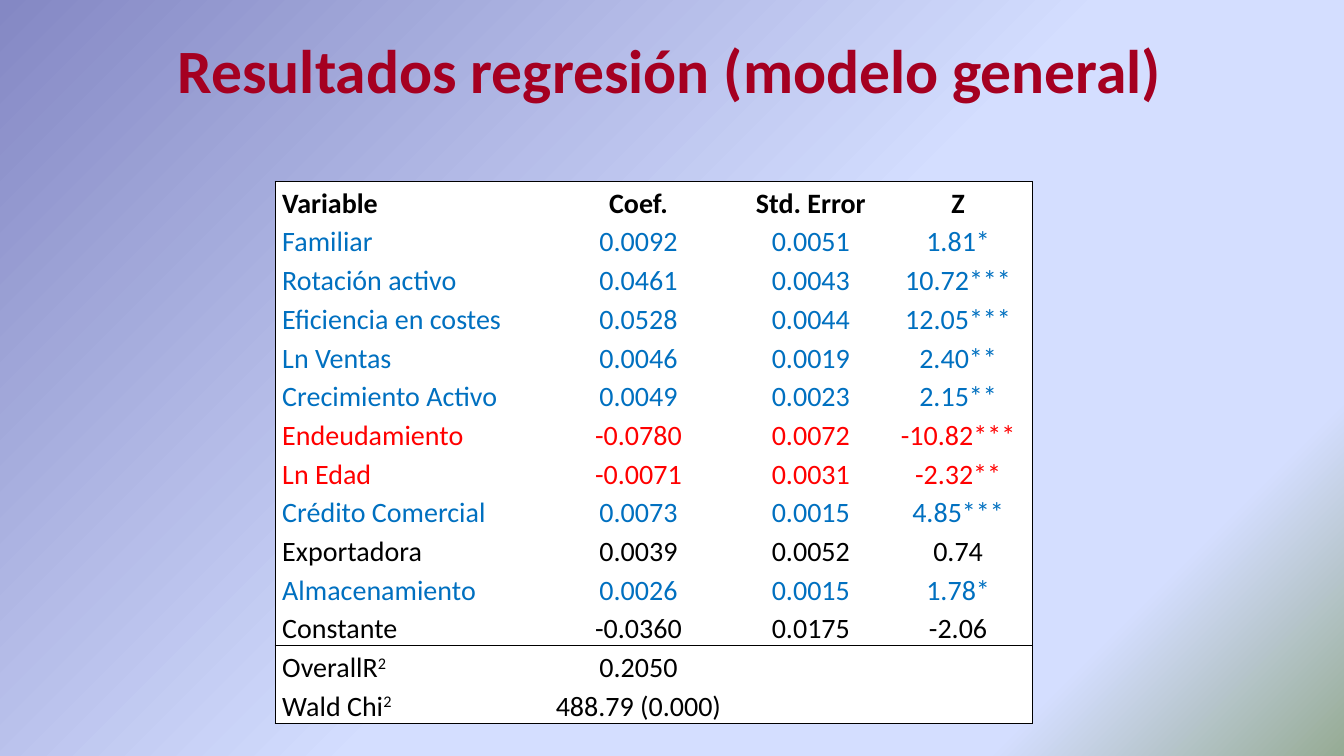
from dataclasses import dataclass

import lxml.etree
import pptx
import pptx.dml.color
import pptx.enum.text
import pptx.oxml.ns
import pptx.util

Pt = pptx.util.Pt
qn = pptx.oxml.ns.qn
ALIGN = pptx.enum.text.PP_ALIGN
ANCHOR = pptx.enum.text.MSO_ANCHOR


@dataclass(frozen=True)
class Theme:
    """Colours, typeface and type sizes of the deck."""
    font: str = "Calibri"
    heading_size: float = 44
    table_size: float = 20
    heading: str = "A50021"
    neutral: str = "000000"
    positive: str = "0070C0"
    negative: str = "FF0000"
    cell: str = "FFFFFF"
    border_width: float = 1
    backdrop: tuple = ((0, "8488C4"), (53, "D4DEFF"), (83, "D4DEFF"), (100, "96AB94"))


THEME = Theme()
COLUMN_WIDTHS = (188.6, 141.8, 104.4, 106)
ROW_HEIGHT = 27.6
HEADER = ("Variable", "Coef.", "Std. Error", "Z")
ESTIMATES = (
    (THEME.positive, "Familiar", "0.0092", "0.0051", "1.81*"),
    (THEME.positive, "Rotación activo", "0.0461", "0.0043", "10.72***"),
    (THEME.positive, "Eficiencia en costes", "0.0528", "0.0044", "12.05***"),
    (THEME.positive, "Ln Ventas", "0.0046", "0.0019", "2.40**"),
    (THEME.positive, "Crecimiento Activo", "0.0049", "0.0023", "2.15**"),
    (THEME.negative, "Endeudamiento", "-0.0780", "0.0072", "-10.82***"),
    (THEME.negative, "Ln Edad", "-0.0071", "0.0031", "-2.32**"),
    (THEME.positive, "Crédito Comercial", "0.0073", "0.0015", "4.85***"),
    (THEME.neutral, "Exportadora", "0.0039", "0.0052", "0.74"),
    (THEME.positive, "Almacenamiento", "0.0026", "0.0015", "1.78*"),
    (THEME.neutral, "Constante", "-0.0360", "0.0175", "-2.06"),
)
FIT_STATISTICS = (("OverallR^2", "0.2050", "", ""), ("Wald Chi^2", "488.79 (0.000)", "", ""))


def apply_format(target, values):
    """Set each named attribute of the target."""
    for attribute, value in values.items():
        setattr(target, attribute, value)


def rgb(colour):
    """Turn a hex string into a colour."""
    return pptx.dml.color.RGBColor.from_string(colour)


def write(paragraph, text, size, colour, bold, layout):
    """Fill a paragraph, raising whatever follows a caret."""
    apply_format(paragraph, layout)
    base, _, exponent = text.partition("^")
    for part, baseline in ((base, None), (exponent, "30000")):
        if part:
            run = paragraph.add_run()
            run.text = part
            apply_format(run.font, {"name": THEME.font, "size": Pt(size), "bold": bold})
            run.font.color.rgb = rgb(colour)
            if baseline:
                run.font._element.set("baseline", baseline)


def paint_backdrop(slide):
    """Lay the diagonal gradient behind the slide."""
    fill = slide.background.fill
    fill.gradient()
    fill.gradient_angle = 315
    stops = next(slide.element.iter(qn("a:gsLst")))
    for stop in list(stops):
        stops.remove(stop)
    for percent, colour in THEME.backdrop:
        stop = lxml.etree.SubElement(stops, qn("a:gs"), pos=str(percent * 1000))
        lxml.etree.SubElement(stop, qn("a:srgbClr"), val=colour)


def add_heading(slide, left, top, width, height):
    """Place the slide heading in its box."""
    frame = slide.shapes.add_textbox(Pt(left), Pt(top), Pt(width), Pt(height)).text_frame
    apply_format(frame, {"word_wrap": True, "vertical_anchor": ANCHOR.MIDDLE})
    write(frame.paragraphs[0], "Resultados regresión (modelo general)", THEME.heading_size,
          THEME.heading, True, {"alignment": ALIGN.CENTER, "line_spacing": 0.9})


def draw_borders(cell, ruled_sides):
    """Rule the given sides of a cell and clear the others."""
    properties = cell._tc.get_or_add_tcPr()
    for side, ruled in ruled_sides.items():
        border = lxml.etree.SubElement(properties, qn(f"a:ln{side}"), w=str(Pt(THEME.border_width)))
        if ruled:
            ink = lxml.etree.SubElement(border, qn("a:solidFill"))
            lxml.etree.SubElement(ink, qn("a:srgbClr"), val=THEME.neutral)
        else:
            lxml.etree.SubElement(border, qn("a:noFill"))


def add_results(slide, left, top):
    """Place the regression table with its top left corner at the given point."""
    rows = [(THEME.neutral, *HEADER), *ESTIMATES,
            *((THEME.neutral, *statistic) for statistic in FIT_STATISTICS)]
    fit_start = 1 + len(ESTIMATES)
    last_row, last_column = len(rows) - 1, len(HEADER) - 1
    results = slide.shapes.add_table(len(rows), len(HEADER), Pt(left), Pt(top),
                                     Pt(sum(COLUMN_WIDTHS)), Pt(ROW_HEIGHT * len(rows))).table
    apply_format(results, {"first_row": False, "horz_banding": False})
    for column, width in zip(results.columns, COLUMN_WIDTHS):
        column.width = Pt(width)
    for r, (colour, *values) in enumerate(rows):
        results.rows[r].height = Pt(ROW_HEIGHT)
        for c, value in enumerate(values):
            cell = results.cell(r, c)
            apply_format(cell, {"margin_left": Pt(5), "margin_right": Pt(5),
                                "margin_top": 0, "margin_bottom": 0})
            draw_borders(cell, {"L": c == 0, "R": c == last_column, "T": r in (0, fit_start),
                                "B": r in (fit_start - 1, last_row)})
            cell.fill.solid()
            cell.fill.fore_color.rgb = rgb(THEME.cell)
            write(cell.text_frame.paragraphs[0], value, THEME.table_size, colour, r == 0,
                  {"alignment": ALIGN.CENTER if c else ALIGN.LEFT, "line_spacing": 1.15})


def main():
    """Build and save the slide."""
    deck = pptx.Presentation()
    apply_format(deck, {"slide_width": Pt(960), "slide_height": Pt(540)})
    slide = deck.slides.add_slide(deck.slide_layouts[6])
    paint_backdrop(slide)
    add_heading(slide, 64.8, 0, 828, 104.4)
    add_results(slide, 196.6, 129.6)
    deck.save("out.pptx")


if __name__ == "__main__":
    main()
